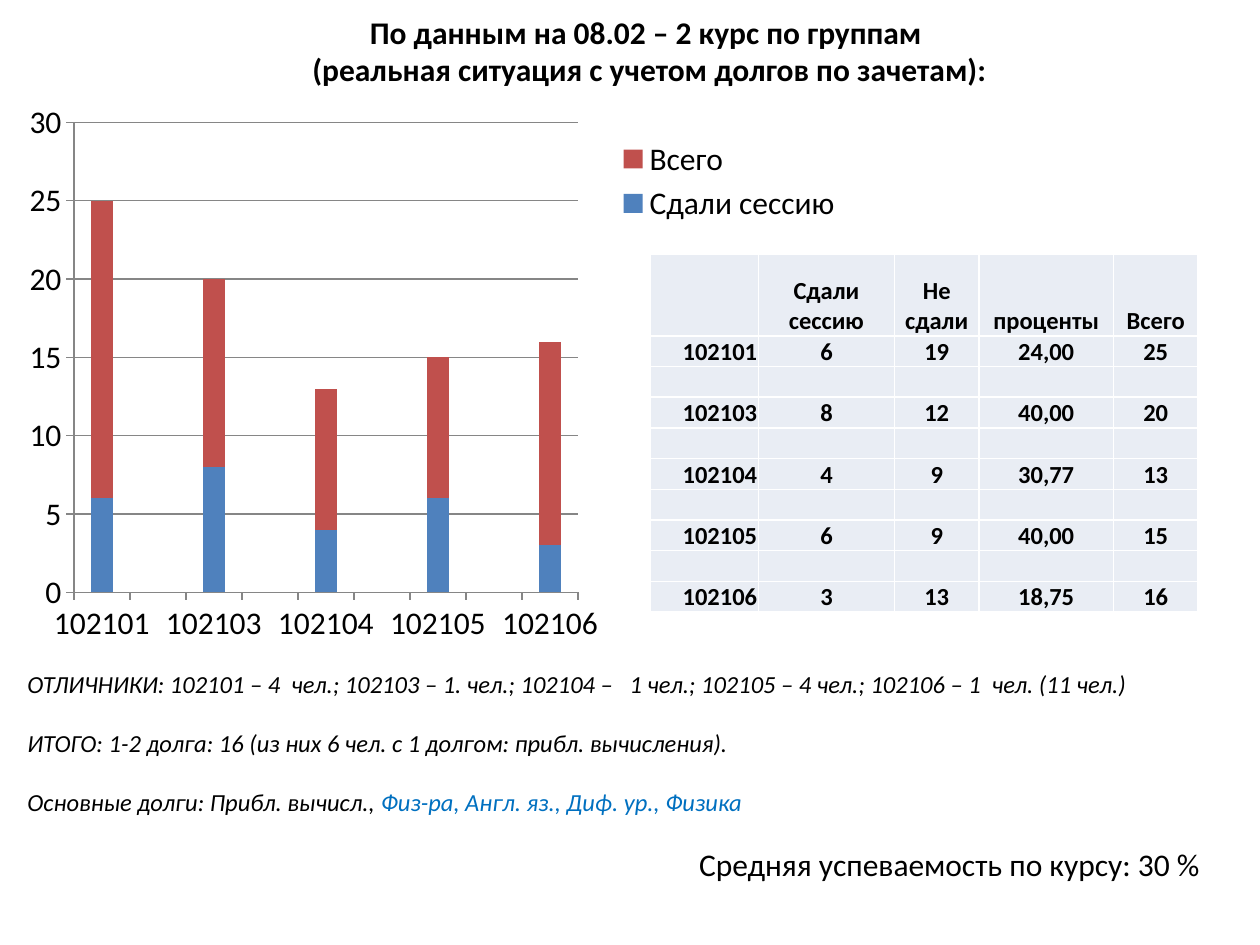
import pptx
import pptx.chart.data
import pptx.dml.color
import pptx.enum.chart
import pptx.enum.text
import pptx.oxml
import pptx.oxml.ns
import pptx.util
from lxml import etree

Pt = pptx.util.Pt
qn = pptx.oxml.ns.qn
ALIGN = pptx.enum.text.PP_ALIGN
FONT, BLACK, BLUE, GREY = "Calibri", "000000", "0070C0", "868686"

# group, passed, failed, percent
GROUPS = [
    ("102101", 6, 19, "24,00"),
    ("102103", 8, 12, "40,00"),
    ("102104", 4, 9, "30,77"),
    ("102105", 6, 9, "40,00"),
    ("102106", 3, 13, "18,75"),
]


def color(code):
    return pptx.dml.color.RGBColor.from_string(code)


def style(font, size, code=BLACK, **more):
    for key, value in {"name": FONT, "size": Pt(size), **more}.items():
        setattr(font, key, value)
    font.color.rgb = color(code)


def spaced(rows, blank):
    """Put a blank between neighbouring rows."""
    out = []
    for row in rows:
        out += [row, blank]
    return out[:-1]


def add_text(slide, box, lines, size, align=ALIGN.LEFT, gap=0, wrap=True, **more):
    """Each line is a list of (text, color) runs."""
    frame = slide.shapes.add_textbox(*map(Pt, box)).text_frame
    frame.word_wrap = wrap
    for i, line in enumerate(lines):
        para = frame.add_paragraph() if i else frame.paragraphs[0]
        para.alignment = align
        para.space_before = Pt(gap if i else 0)
        for text, code in line:
            run = para.add_run()
            run.text = text
            style(run.font, size, code, **more)


def set_layout(part, inner, **place):
    """Fix a chart part at fractions of the chart box."""
    old = part.find(qn("c:layout"))
    if old is None:
        old = etree.Element(qn("c:layout"))
        part.insert(1 if part.tag == qn("c:legend") else 0, old)
    for child in list(old):
        old.remove(child)
    manual = etree.SubElement(old, qn("c:manualLayout"))
    if inner:
        etree.SubElement(manual, qn("c:layoutTarget"), val="inner")
    for key in "xy":
        etree.SubElement(manual, qn(f"c:{key}Mode"), val="edge")
    for key in "xywh":
        etree.SubElement(manual, qn(f"c:{key}"), val=str(place[key]))


def add_chart(slide, box):
    kinds = pptx.enum.chart
    rows = spaced(GROUPS, ("", None, None, ""))
    data = pptx.chart.data.CategoryChartData()
    data.categories = [row[0] for row in rows]
    data.add_series("Сдали сессию", [row[1] for row in rows])
    data.add_series("Всего", [row[2] for row in rows])
    chart = slide.shapes.add_chart(
        kinds.XL_CHART_TYPE.COLUMN_STACKED, *map(Pt, box), data).chart
    style(chart.font, 18)
    chart.has_title = False
    chart.has_legend = True
    chart.legend.position = kinds.XL_LEGEND_POSITION.RIGHT
    chart.legend.include_in_layout = False

    plot = chart.plots[0]
    for key, value in {"gap_width": 150, "overlap": 100, "vary_by_categories": False}.items():
        setattr(plot, key, value)
    for series, code in zip(plot.series, ("4F81BD", "C0504D")):
        series.format.fill.solid()
        series.format.fill.fore_color.rgb = color(code)

    scale = chart.value_axis
    for key, value in {"minimum_scale": 0, "maximum_scale": 30, "major_unit": 5}.items():
        setattr(scale, key, value)
    for axis in (scale, chart.category_axis):
        axis.major_tick_mark = kinds.XL_TICK_MARK.OUTSIDE
        axis.minor_tick_mark = kinds.XL_TICK_MARK.NONE
    for line in (scale.format.line, chart.category_axis.format.line,
                 scale.major_gridlines.format.line):
        line.color.rgb = color(GREY)
        line.width = Pt(0.75)

    area = chart.element.find(".//" + qn("c:plotArea"))
    set_layout(area, True, x=0.07, y=0.05, w=0.6, h=0.84)
    legend = chart.element.find(".//" + qn("c:legend"))
    set_layout(legend, False, x=0.71, y=0.07, w=0.28, h=0.17)


def set_edges(cell, code):
    props = cell._tc.get_or_add_tcPr()
    for i, side in enumerate(("lnL", "lnR", "lnT", "lnB")):
        line = etree.Element(qn("a:" + side), w=str(Pt(1)))
        fill = etree.SubElement(line, qn("a:solidFill"))
        etree.SubElement(fill, qn("a:srgbClr"), val=code)
        props.insert(i, line)


def fill_cell(cell, text, align):
    for key, value in {"margin_left": Pt(0.7), "margin_right": Pt(0.7),
                       "margin_top": Pt(0.7), "margin_bottom": 0,
                       "vertical_anchor": pptx.enum.text.MSO_ANCHOR.BOTTOM}.items():
        setattr(cell, key, value)
    cell.fill.solid()
    cell.fill.fore_color.rgb = color("E9EDF4")
    set_edges(cell, "FFFFFF")
    para = cell.text_frame.paragraphs[0]
    para.alignment = align
    if text:
        run = para.add_run()
        run.text = text
        style(run.font, 14, bold=True)
    else:
        etree.SubElement(para._p, qn("a:endParaRPr"), sz="1400")


def add_table(slide, box):
    head = ("", "Сдали сессию", "Не сдали", "проценты", "Всего")
    body = [(name, str(good), str(bad), part, str(good + bad))
            for name, good, bad, part in GROUPS]
    rows = [head] + spaced(body, ("",) * len(head))
    table = slide.shapes.add_table(len(rows), len(head), *map(Pt, box)).table
    for col, width in zip(table.columns, (61.9, 77.8, 48.2, 77, 48.2)):
        col.width = Pt(width)
    top = 46.5
    for r, row in enumerate(rows):
        table.rows[r].height = Pt((box[3] - top) / (len(rows) - 1) if r else top)
        for c, text in enumerate(row):
            fill_cell(table.cell(r, c), text, ALIGN.CENTER if c else ALIGN.RIGHT)


def main():
    deck = pptx.Presentation()
    deck.slide_width, deck.slide_height = Pt(720), Pt(540)
    slide = deck.slides.add_slide(deck.slide_layouts[6])
    add_chart(slide, (8.6, 54, 480.2, 319.7))
    add_text(slide, (42.5, 3.6, 657.4, 51.1), [
        [("По данным на 08.02 – 2 курс по группам ", BLACK)],
        [("(реальная ситуация с учетом долгов по зачетам):", BLACK)],
    ], 18, ALIGN.CENTER, bold=True)
    add_text(slide, (8.6, 378.7, 680.4, 92.2), [
        [("ОТЛИЧНИКИ: 102101 – 4  чел.; 102103 – 1. чел.; 102104 –   1 чел.; "
          "102105 – 4 чел.; 102106 – 1  чел. (11 чел.)", BLACK)],
        [("ИТОГО: 1-2 долга: 16 (из них 6 чел. с 1 долгом: прибл. вычисления).", BLACK)],
        [("Основные долги: Прибл. вычисл., ", BLACK),
         ("Физ-ра, Англ. яз., Диф. ур., Физика", BLUE)],
    ], 14, gap=17, italic=True)
    add_text(slide, (392.4, 479.5, 308.2, 28.8),
             [[("Средняя успеваемость по курсу: 30 %", BLACK)]], 18, wrap=False)
    add_table(slide, (371.5, 145.4, 313.1, 204.5))
    deck.save("out.pptx")


if __name__ == "__main__":
    main()
